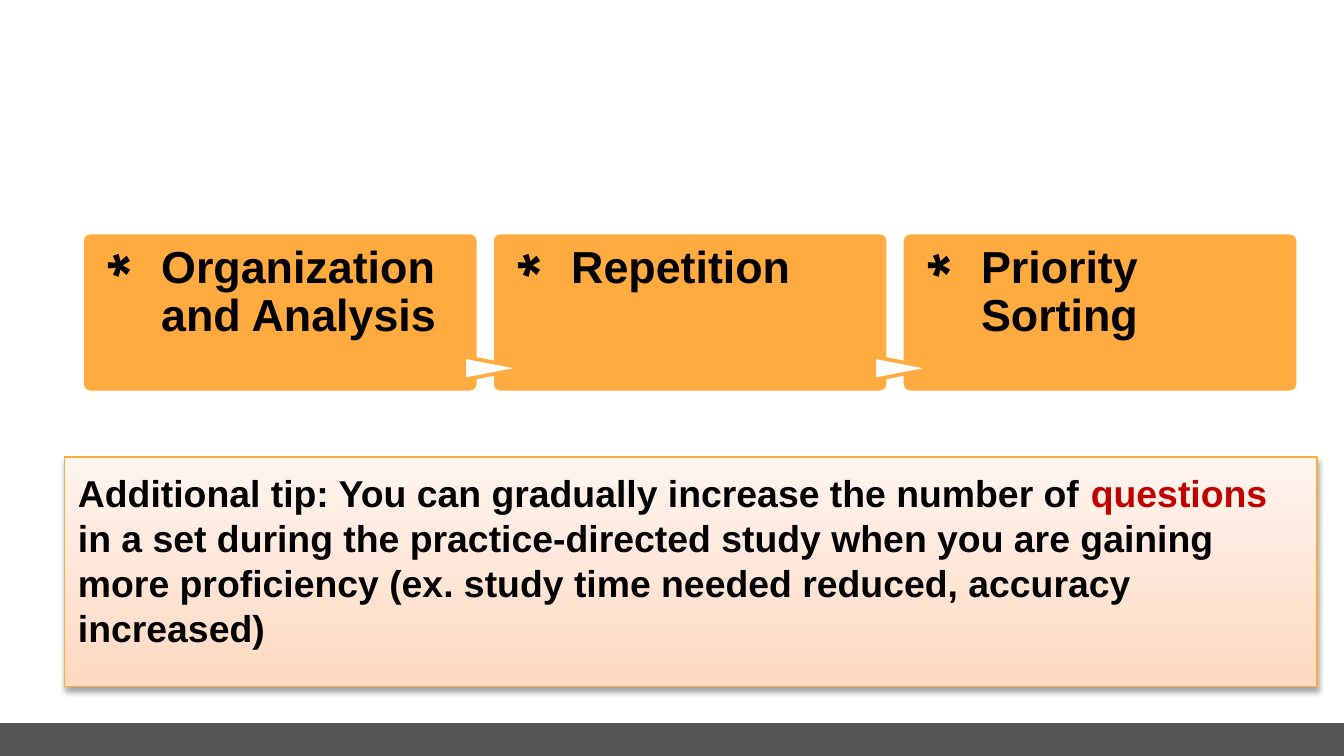
from lxml import etree
from pptx import Presentation
from pptx.dml.color import RGBColor
from pptx.enum.shapes import MSO_SHAPE as Shape
from pptx.enum.text import MSO_ANCHOR as Anchor, MSO_AUTO_SIZE as AutoSize, PP_ALIGN as Align
from pptx.oxml.ns import qn
from pptx.util import Inches, Pt

# Content
STEPS = ["Organization and Analysis", "Repetition", "Priority Sorting"]
TIP = [
    ("Additional tip: You can gradually increase the number of ", "black"),
    ("questions ", "red"),
    ("in a set during the practice-directed study when you are gaining more "
     "proficiency (ex. study time needed reduced, accuracy increased)", "black"),
]

# Look and grid, in inches
COLORS = {"black": "000000", "white": "FFFFFF", "red": "C00000", "orange": "FFAB40",
          "bar": "555555", "bar_line": "595959", "tip_top": "FFF5EF", "tip_end": "FFD8C0"}
FONT = "Arial"
WIDTH = 10
HEIGHT = WIDTH * 9 / 16
BAR_HEIGHT = 0.24
CARD_LEFT, CARD_TOP, CARD_WIDTH, CARD_HEIGHT = 0.61, 1.73, 2.95, 1.19
CARD_PITCH = 3.05
STAR_WIDTH, STAR_HEIGHT = 0.97, 0.59
ARROW_WIDTH, ARROW_HEIGHT = 0.17, 0.44


def color(name):
    return RGBColor.from_string(COLORS[name])


def place(*lengths):
    return [Inches(length) for length in lengths]


def style_font(font, size, name="black"):
    font.name, font.size, font.bold = FONT, Pt(size), True
    font.color.rgb = color(name)


def set_frame(frame, insets):
    frame.word_wrap = True
    frame.auto_size = AutoSize.NONE
    frame.vertical_anchor = Anchor.TOP
    (frame.margin_left, frame.margin_top,
     frame.margin_right, frame.margin_bottom) = place(*insets)


def add_shape(kind, box, fill, line, weight):
    shape = page.shapes.add_shape(kind, *place(*box))
    shape.shadow.inherit = False
    shape.fill.solid()
    shape.fill.fore_color.rgb = color(fill)
    shape.line.color.rgb = color(line)
    shape.line.width = Pt(weight)
    return shape


def add_label(text, box, size, insets, align=Align.LEFT):
    label = page.shapes.add_textbox(*place(*box))
    set_frame(label.text_frame, insets)
    label.text_frame.text = text
    para = label.text_frame.paragraphs[0]
    para.alignment, para.line_spacing = align, 0.9
    style_font(para.runs[0].font, size)
    return label


def add_soft_shadow(shape):
    effects = etree.SubElement(shape._element.spPr, qn("a:effectLst"))
    shadow = etree.SubElement(effects, qn("a:outerShdw"), blurRad="40000",
                              dist="23000", dir="5400000", rotWithShape="0")
    tint = etree.SubElement(shadow, qn("a:srgbClr"), val=COLORS["black"])
    etree.SubElement(tint, qn("a:alpha"), val="35000")


deck = Presentation()
deck.slide_width, deck.slide_height = place(WIDTH, HEIGHT)
page = deck.slides.add_slide(deck.slide_layouts[5])

# Footer bar
add_shape(Shape.RECTANGLE, (0, HEIGHT - BAR_HEIGHT, WIDTH, BAR_HEIGHT),
          "bar", "bar_line", 0.75)

# Step cards, each after the first with an arrow over the gap before it
for index, step in enumerate(STEPS):
    left = CARD_LEFT + index * CARD_PITCH
    card = add_shape(Shape.ROUNDED_RECTANGLE, (left, CARD_TOP, CARD_WIDTH, CARD_HEIGHT),
                     "orange", "white", 2)
    card.adjustments[0] = 0.05
    # The turned box fills the strip at the card's left edge
    turn = (STAR_WIDTH - STAR_HEIGHT) / 2
    star = add_label("*", (left - turn, CARD_TOP + turn, STAR_WIDTH, STAR_HEIGHT),
                     32, (0, 0.12, 0.16, 0), Align.RIGHT)
    star.rotation = 270
    if index:
        arrow = add_shape(Shape.FLOWCHART_EXTRACT,
                          (left - 0.07, 2.52, ARROW_WIDTH, ARROW_HEIGHT),
                          "white", "orange", 2)
        arrow.rotation = 90
    add_label(step, (left + STAR_HEIGHT, CARD_TOP, 2.2, CARD_HEIGHT), 24, (0, 0.09, 0, 0))

# Tip panel
tip = page.shapes.title
tip.left, tip.top, tip.width, tip.height = place(0.48, 3.4, 9.32, 1.71)
tip.fill.gradient()
tip.fill.gradient_angle = 270
for stop, name in zip(tip.fill.gradient_stops, ("tip_top", "tip_end")):
    stop.color.rgb = color(name)
tip.line.color.rgb = color("orange")
tip.line.width = Pt(0.75)
add_soft_shadow(tip)
set_frame(tip.text_frame, (0.1, 0.1, 0.1, 0.1))
para = tip.text_frame.paragraphs[0]
para.alignment = Align.LEFT
for text, name in TIP:
    span = para.add_run()
    span.text = text
    style_font(span.font, 20, name)

deck.save("out.pptx")
